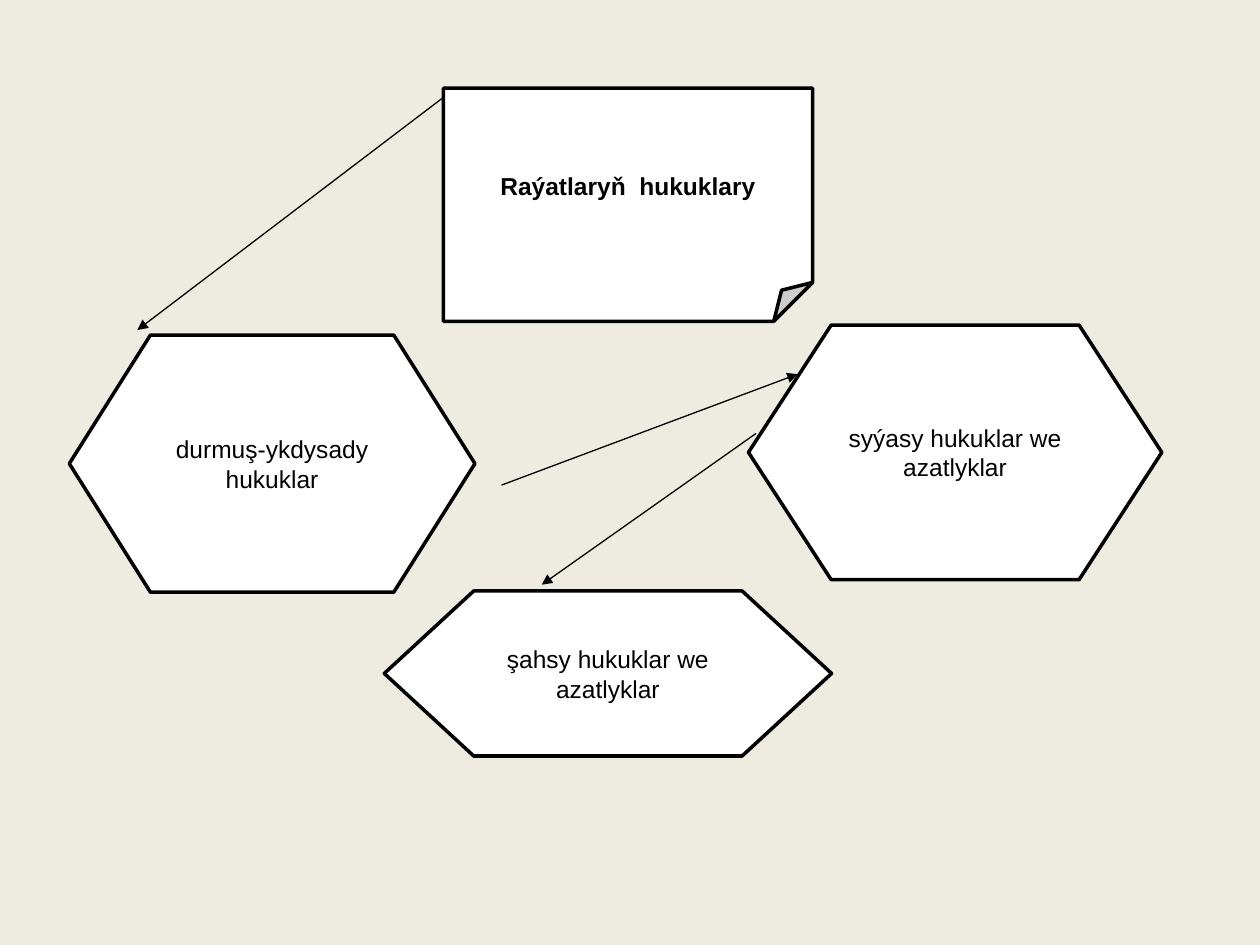
"""Build a slide mapping the groups of citizens' rights."""
from typing import NamedTuple

from lxml.etree import SubElement
from pptx import Presentation
from pptx.dml.color import RGBColor
from pptx.enum.shapes import MSO_CONNECTOR, MSO_SHAPE
from pptx.enum.text import MSO_ANCHOR, PP_ALIGN
from pptx.oxml.ns import qn
from pptx.util import Pt

BACKGROUND = RGBColor(0xEE, 0xEC, 0xE1)
WHITE = RGBColor(0xFF, 0xFF, 0xFF)
BLACK = RGBColor(0, 0, 0)
FONT = {"name": "Arial", "size": Pt(14), "bold": False}
HEXAGON = MSO_SHAPE.FLOWCHART_PREPARATION


class Node(NamedTuple):
    text: str
    left: float
    top: float
    width: float
    height: float
    kind: MSO_SHAPE = HEXAGON
    bold: bool = False


class Arrow(NamedTuple):
    x1: float
    y1: float
    x2: float
    y2: float


NODES = [
    Node("Raýatlaryň  hukuklary", 253.4, 50.4, 211, 133.2, MSO_SHAPE.FOLDED_CORNER, True),
    Node("durmuş-ykdysady hukuklar", 39.6, 191.5, 231.8, 146.9),
    Node("syýasy hukuklar we azatlyklar", 427.7, 185.8, 236.2, 145.4),
    Node("şahsy hukuklar we azatlyklar", 219.6, 337.7, 255.6, 94.3),
]
ARROWS = [
    Arrow(432, 247.7, 309.6, 334.1),
    Arrow(286.6, 277.2, 455.8, 213.8),
    Arrow(252.7, 56.2, 78.5, 188.6),
]


def add_node(slide, node: Node) -> None:
    """Draw one outlined shape with centred text."""
    box = (Pt(v) for v in (node.left, node.top, node.width, node.height))
    sp = slide.shapes.add_shape(node.kind, *box)
    sp.shadow.inherit = False
    sp.fill.solid()
    sp.fill.fore_color.rgb = WHITE
    sp.line.color.rgb = BLACK
    sp.line.width = Pt(2)
    tf = sp.text_frame
    tf.word_wrap = True
    tf.vertical_anchor = MSO_ANCHOR.MIDDLE
    p = tf.paragraphs[0]
    p.alignment = PP_ALIGN.CENTER
    r = p.add_run()
    r.text = node.text
    for name, value in {**FONT, "bold": node.bold}.items():
        setattr(r.font, name, value)
    r.font.color.rgb = BLACK


def add_arrow(slide, arrow: Arrow) -> None:
    """Draw one thin line with a triangle at its end."""
    cxn = slide.shapes.add_connector(MSO_CONNECTOR.STRAIGHT, *(Pt(v) for v in arrow))
    cxn.line.color.rgb = BLACK
    cxn.line.width = Pt(0.75)
    SubElement(cxn.line._get_or_add_ln(), qn("a:tailEnd"), type="triangle")
    SubElement(cxn._element.spPr, qn("a:effectLst"))


def main() -> None:
    """Assemble and save the slide."""
    prs = Presentation()
    prs.slide_width, prs.slide_height = Pt(720), Pt(540)
    s = prs.slides.add_slide(prs.slide_layouts[6])
    s.background.fill.solid()
    s.background.fill.fore_color.rgb = BACKGROUND
    for node in NODES:
        add_node(s, node)
    for arrow in ARROWS:
        add_arrow(s, arrow)
    prs.save("out.pptx")


if __name__ == "__main__":
    main()
